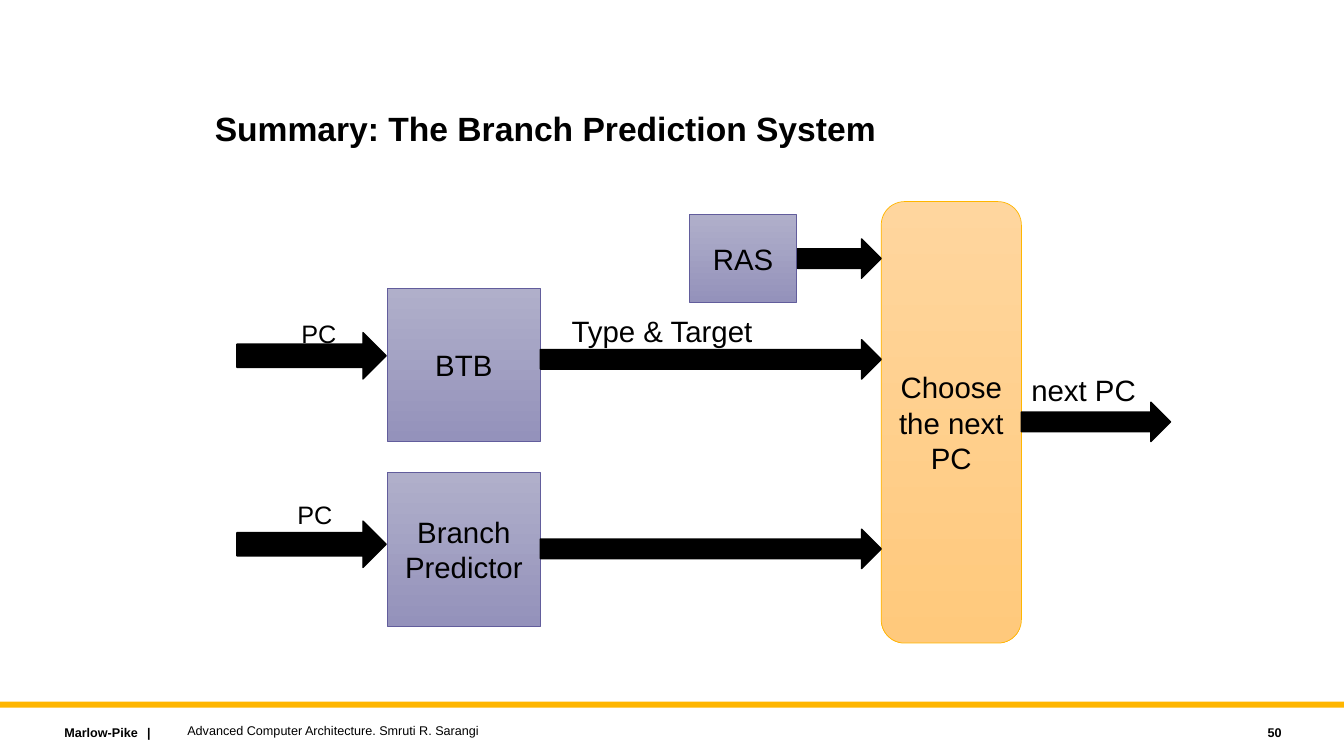
from lxml import etree
from pptx import Presentation
from pptx.dml.color import RGBColor
from pptx.enum import shapes, text
from pptx.oxml.ns import qn
from pptx.util import Inches, Pt

FONT = "Arial"
BLACK, GOLD = "000000", "FFB600"
PURPLE = {"top": "B0AFCA", "bottom": "9492BB", "line": "625D9C"}
ORANGE = {"top": "FFD69E", "bottom": "FFC97C", "line": GOLD}
LEFT, CENTER, RIGHT = text.PP_ALIGN.LEFT, text.PP_ALIGN.CENTER, text.PP_ALIGN.RIGHT
TOP, MIDDLE = text.MSO_ANCHOR.TOP, text.MSO_ANCHOR.MIDDLE
RECTANGLE = shapes.MSO_SHAPE.RECTANGLE
ROUNDED = shapes.MSO_SHAPE.ROUNDED_RECTANGLE
ARROW = shapes.MSO_SHAPE.RIGHT_ARROW


def color(value):
    return RGBColor.from_string(value)


def write(shape, lines, size, bold=False, align=LEFT, anchor=TOP, wrap=True, tab=None):
    """Fill a shape with one paragraph per line."""
    frame = shape.text_frame
    frame.text = "\n".join(lines)
    frame.word_wrap, frame.vertical_anchor = wrap, anchor
    for paragraph in frame.paragraphs:
        paragraph.alignment = align
        if tab:
            tabs = etree.SubElement(paragraph._p.get_or_add_pPr(), qn("a:tabLst"))
            etree.SubElement(tabs, qn("a:tab"), pos=str(Inches(tab)), algn="l")
        font_format = {"name": FONT, "size": Pt(size), "bold": bold}
        for run in paragraph.runs:
            for name, value in font_format.items():
                setattr(run.font, name, value)
            run.font.color.rgb = color(BLACK)


def add_shape(slide, kind, box):
    shape = slide.shapes.add_shape(kind, *map(Inches, box))
    shape.shadow.inherit = False
    return shape


def add_bar(slide, box, fill):
    bar = add_shape(slide, RECTANGLE, box)
    bar.fill.solid()
    bar.fill.fore_color.rgb = color(fill)
    bar.line.fill.background()


def add_block(slide, kind, box, lines, palette):
    """Outlined block shaded from top to bottom."""
    block = add_shape(slide, kind, box)
    block.fill.gradient()
    block.fill.gradient_angle = 270
    for stop, name in zip(block.fill.gradient_stops, ("top", "bottom")):
        stop.color.rgb = color(palette[name])
    block.line.color.rgb = color(palette["line"])
    block.line.width = Pt(0.5)
    write(block, lines, 21, align=CENTER, anchor=MIDDLE)


def add_arrow(slide, left, top, width, height):
    arrow = add_shape(slide, ARROW, (left, top, width, height))
    arrow.fill.solid()
    arrow.fill.fore_color.rgb = color(BLACK)
    arrow.line.color.rgb = color(BLACK)
    arrow.line.width = Pt(1)


def add_text(slide, box, line, size, **options):
    shape = slide.shapes.add_textbox(*map(Inches, box))
    write(shape, [line], size, **options)
    return shape


def add_label(slide, box, line, size):
    label = add_text(slide, box, line, size, wrap=False)
    label.text_frame.auto_size = text.MSO_AUTO_SIZE.SHAPE_TO_FIT_TEXT


def add_title(slide, box, line):
    title = slide.shapes.title
    for name, value in zip(("left", "top", "width", "height"), box):
        setattr(title, name, Inches(value))
    write(title, [line], 24, bold=True)
    title.text_frame.auto_size = text.MSO_AUTO_SIZE.NONE
    title.text_frame.paragraphs[0].line_spacing = 0.9


def main():
    presentation = Presentation()
    presentation.slide_width, presentation.slide_height = Inches(13.33), Inches(7.5)
    slide = presentation.slides.add_slide(presentation.slide_layouts[5])
    add_title(slide, (2.03, 1.07, 8.62, 1.09), "Summary: The Branch Prediction System")

    # Predictor blocks and the final choice
    block_left, block_side = 3.84, 1.52
    choice_left, choice_width = 8.74, 1.39
    for top, lines in ((2.86, ["BTB"]), (4.69, ["Branch", "Predictor"])):
        add_block(slide, RECTANGLE, (block_left, top, block_side, block_side), lines, PURPLE)
    add_block(slide, RECTANGLE, (6.84, 2.13, 1.06, 0.87), ["RAS"], PURPLE)
    add_block(slide, ROUNDED, (choice_left, 2, choice_width, 4.38),
              ["Choose", "the next PC"], ORANGE)

    # Arrows into the predictors, into the choice, and out of it
    for top in (3.3, 5.17):
        add_arrow(slide, 2.35, top, 1.48, 0.46)
    block_right = block_left + block_side
    for left, top in ((7.91, 2.37), (block_right, 3.37), (block_right, 5.25)):
        add_arrow(slide, left, top, choice_left - left, 0.39)
    add_arrow(slide, choice_left + choice_width, 3.99, 1.48, 0.39)

    # Arrow labels
    add_label(slide, (2.89, 3.11, 0.55, 0.4), "PC", 18)
    add_label(slide, (2.85, 4.9, 0.55, 0.4), "PC", 18)
    add_label(slide, (5.57, 3.06, 2.01, 0.45), "Type & Target", 21)
    add_label(slide, (10.13, 3.64, 1.25, 0.45), "next PC", 21)

    # Footer
    add_bar(slide, (0, 6.96, 13.33, 0.06), GOLD)
    add_text(slide, (0.54, 7.14, 2.27, 0.25), "Marlow-Pike\t|", 9, bold=True, tab=0.82)
    add_text(slide, (1.76, 7.12, 8, 0.25),
             "Advanced Computer Architecture. Smruti R. Sarangi", 9, anchor=MIDDLE)
    add_text(slide, (11.41, 7.14, 1.4, 0.25), "50", 9, bold=True, align=RIGHT, anchor=MIDDLE)

    presentation.save("out.pptx")


if __name__ == "__main__":
    main()
